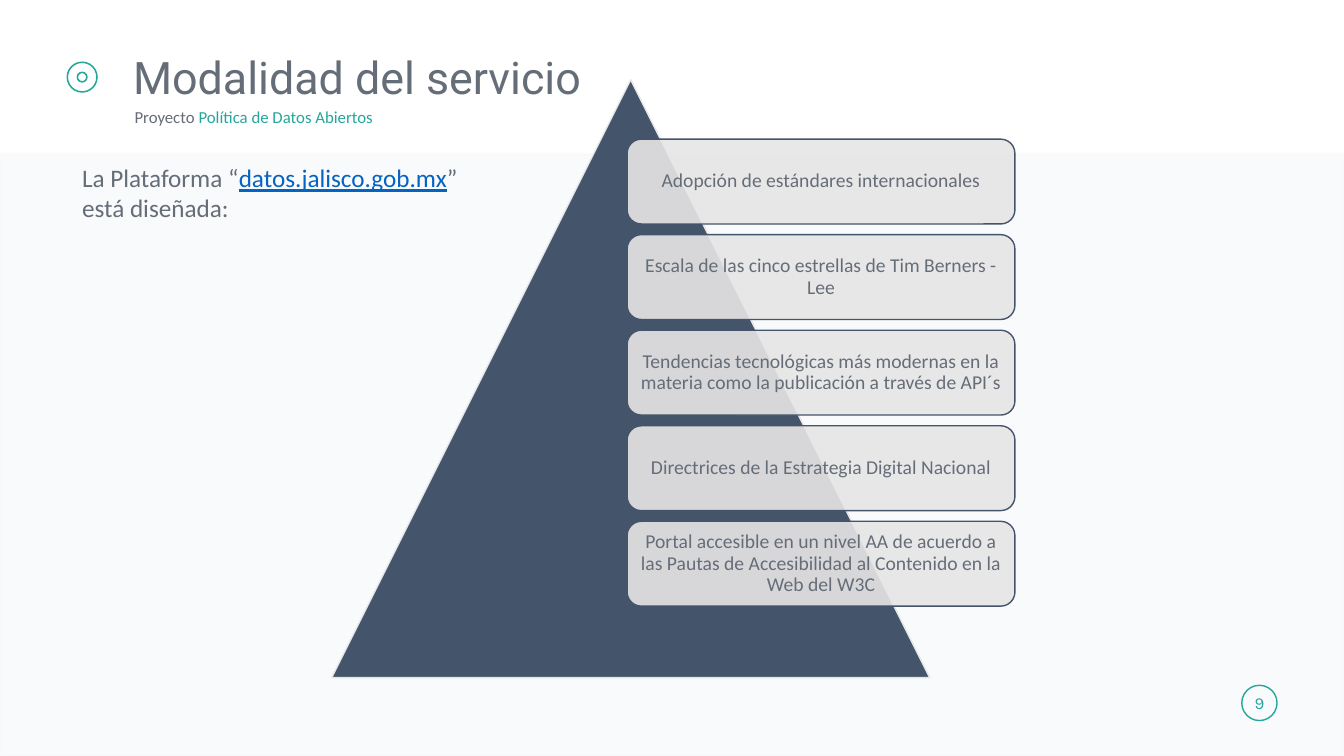
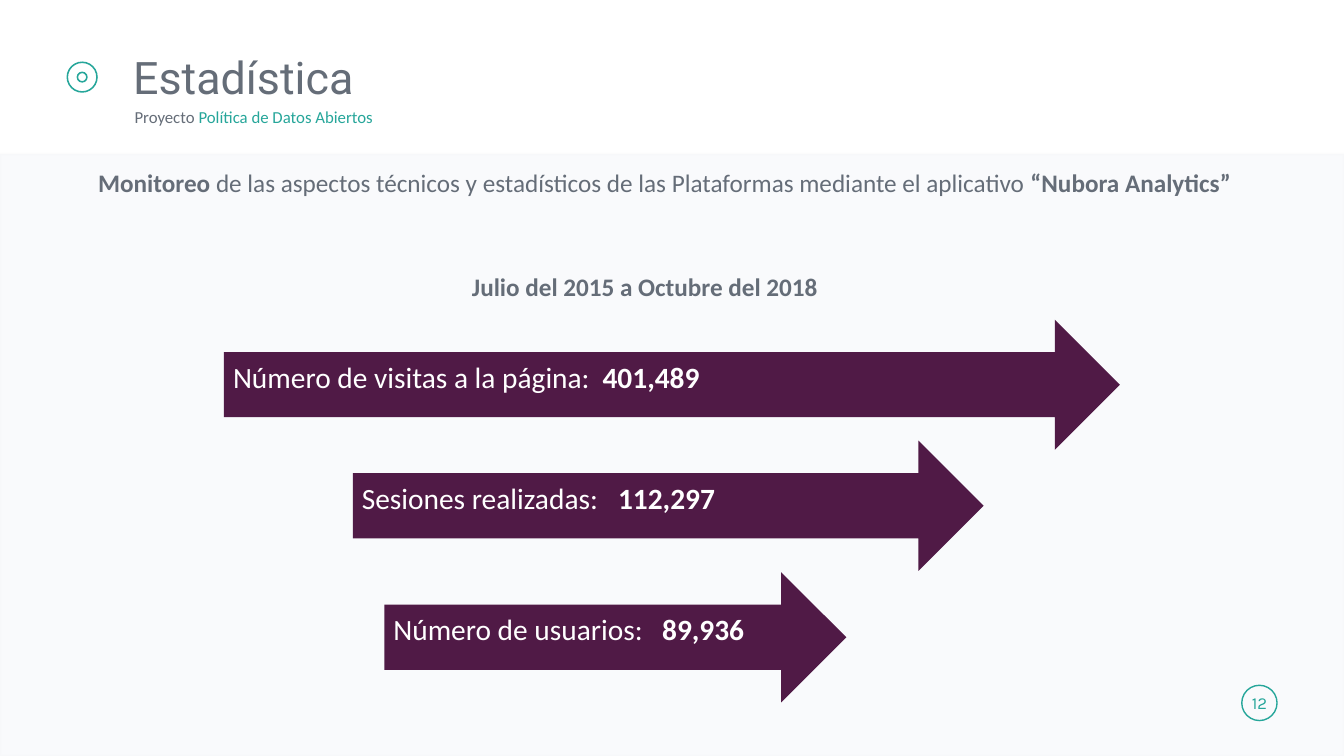
from lxml import etree
from pptx import Presentation
from pptx.dml.color import RGBColor
from pptx.enum.shapes import MSO_SHAPE as SHAPE
from pptx.enum.text import MSO_ANCHOR as ANCHOR, PP_ALIGN as ALIGN
from pptx.oxml.ns import qn
from pptx.util import Pt

COLORS = {
    "panel": "7B8DB3", "panel_line": "EBEBEB", "teal": "26A69A",
    "text": "656D78", "slate": "44546A", "pale": "E7E6E6",
    "link": "0563C1", "purple": "501A46", "white": "FFFFFF",
}

# Text styles
TITLE = {"name": "Roboto", "size": Pt(32), "color": "text"}
SUBTITLE = {"name": "Calibri", "size": Pt(12), "color": "text"}
NUMBER = {"name": "Karla", "size": Pt(12), "color": "teal"}
BODY = {"name": "Calibri", "size": Pt(18), "color": "text"}
CARD = {"name": "Calibri", "size": Pt(14), "color": "text"}
ARROW = {"name": "Calibri", "size": Pt(21), "color": "white"}
BOLD = {"bold": True}


def draw_shape(page, kind, bounds, fill=None, line=None, weight=1,
               fill_alpha=100, line_alpha=100):
    """Add a preset shape; bounds are left, top, width, height in points."""
    shape = page.shapes.add_shape(kind, *map(Pt, bounds))
    shape.shadow.inherit = False
    if line:
        shape.line.width = Pt(weight)
    for target, color, alpha in ((shape.fill, fill, fill_alpha),
                                 (shape.line.fill, line, line_alpha)):
        if not color:
            target.background()
            continue
        target.solid()
        target.fore_color.rgb = RGBColor.from_string(COLORS[color])
        if alpha < 100:
            parent = shape._element.spPr
            if target is not shape.fill:
                parent = parent.find(qn("a:ln"))
            tint = parent.find(qn("a:solidFill"))[0]
            etree.SubElement(tint, qn("a:alpha"), val=str(alpha * 1000))
    return shape


def write_text(box, spans, style, align=ALIGN.LEFT, anchor=ANCHOR.TOP,
               spacing=1.0, insets=(7.2, 3.6, 7.2, 3.6), wrap=True, tab=None):
    """Fill a box with one paragraph of (text, format changes) spans."""
    frame = box.text_frame
    sides = ("margin_left", "margin_top", "margin_right", "margin_bottom")
    layout = dict(zip(sides, map(Pt, insets)))
    layout |= {"word_wrap": wrap, "vertical_anchor": anchor}
    for key, value in layout.items():
        setattr(frame, key, value)
    para = frame.paragraphs[0]
    if tab:
        tabs = etree.SubElement(para._p.get_or_add_pPr(), qn("a:tabLst"))
        etree.SubElement(tabs, qn("a:tab"), pos=str(Pt(tab)), algn="l")
    para.alignment = align
    para.line_spacing = spacing
    for text, changes in spans:
        span = para.add_run()
        span.text = text
        values = style | changes
        color = values.pop("color")
        for key, value in values.items():
            setattr(span.font, key, value)
        span.font.color.rgb = RGBColor.from_string(COLORS[color])


deck = Presentation()
deck.slide_width, deck.slide_height = Pt(960), Pt(540)

# Shared frame: panel, icon, page number, title and subtitle
pages = []
for title, number in (("Modalidad del servicio", "9"), ("Estadística", "12")):
    page = deck.slides.add_slide(deck.slide_layouts[6])
    pages.append(page)
    draw_shape(page, SHAPE.RECTANGLE, (0, 110, 960, 430), "panel",
               "panel_line", 2, fill_alpha=4, line_alpha=10)
    for diameter in (21.2, 6.8):
        corner = (58.7 - diameter / 2, 55.1 - diameter / 2)
        draw_shape(page, SHAPE.OVAL, (*corner, diameter, diameter),
                   line="teal", weight=1.1)
    badge = draw_shape(page, SHAPE.ROUNDED_RECTANGLE,
                       (887, 489.5, 25.2, 25.2), line="teal")
    badge.adjustments[0] = 0.5
    write_text(badge, [(number, {})], NUMBER, ALIGN.CENTER, ANCHOR.MIDDLE,
               insets=(0, 0, 0, 0), wrap=False)
    title_box = page.shapes.add_textbox(Pt(88), Pt(36), Pt(725), Pt(38))
    write_text(title_box, [(title, {})], TITLE, spacing=0.9)
    subtitle_box = page.shapes.add_textbox(Pt(89), Pt(74), Pt(724), Pt(21))
    write_text(subtitle_box, [("Proyecto ", {}),
                              ("Política de Datos Abiertos", {"color": "teal"})],
               SUBTITLE, spacing=0.9)
service, statistics = pages

# Service: pyramid with a column of cards
draw_shape(service, SHAPE.ISOSCELES_TRIANGLE, (237, 57, 427, 427),
           "slate", "pale")
cards = (
    "Adopción de estándares internacionales",
    "Escala de las cinco estrellas de Tim Berners - Lee",
    "Tendencias tecnológicas más modernas en la materia como la publicación "
    "a través de API´s",
    "Directrices de la Estrategia Digital Nacional",
    "Portal accesible en un nivel AA de acuerdo a las Pautas de Accesibilidad "
    "al Contenido en la Web del W3C",
)
for index, label in enumerate(cards):
    card = draw_shape(service, SHAPE.ROUNDED_RECTANGLE,
                      (448, 99.4 + index * 68.25, 277, 60.6),
                      "pale", "slate", fill_alpha=90)
    write_text(card, [(label, {})], CARD, ALIGN.CENTER, ANCHOR.MIDDLE, 0.9,
               (4.2, 4.2, 4.2, 4.2))

# Service: introduction
intro = service.shapes.add_textbox(Pt(51.5), Pt(112.5), Pt(300), Pt(51))
write_text(intro, [("La Plataforma “", {}),
                   ("datos.jalisco.gob.mx", {"color": "link", "underline": True}),
                   ("” está diseñada:", {})], BODY)

# Statistics: arrows with label, value and tab position of the value
arrows = (
    ("Número de visitas a la página:", "401,489", (160, 228.3, 640, 93), 264),
    ("Sesiones realizadas:", "112,297", (252, 314.8, 450.6, 93), 183),
    ("Número de usuarios:", "89,936", (274.5, 408.7, 330, 93), 192),
)
for label, value, bounds, tab in arrows:
    arrow = draw_shape(statistics, SHAPE.RIGHT_ARROW, bounds, "purple")
    write_text(arrow, [(label + "\t", {}), (value, BOLD)], ARROW,
               anchor=ANCHOR.MIDDLE, spacing=0.9,
               insets=(6.5, 6.5, 20, 15), tab=tab)

# Statistics: introduction and period
intro = statistics.shapes.add_textbox(Pt(63), Pt(116), Pt(834), Pt(29))
write_text(intro, [("Monitoreo ", BOLD),
                   ("de las aspectos técnicos y estadísticos de las Plataformas "
                    "mediante el aplicativo ", {}),
                   ("“Nubora Analytics”", BOLD)], BODY)
period = statistics.shapes.add_textbox(Pt(330), Pt(190), Pt(325), Pt(29))
write_text(period, [("Julio del 2015 a Octubre del 2018", BOLD)], BODY)

deck.save("out.pptx")
